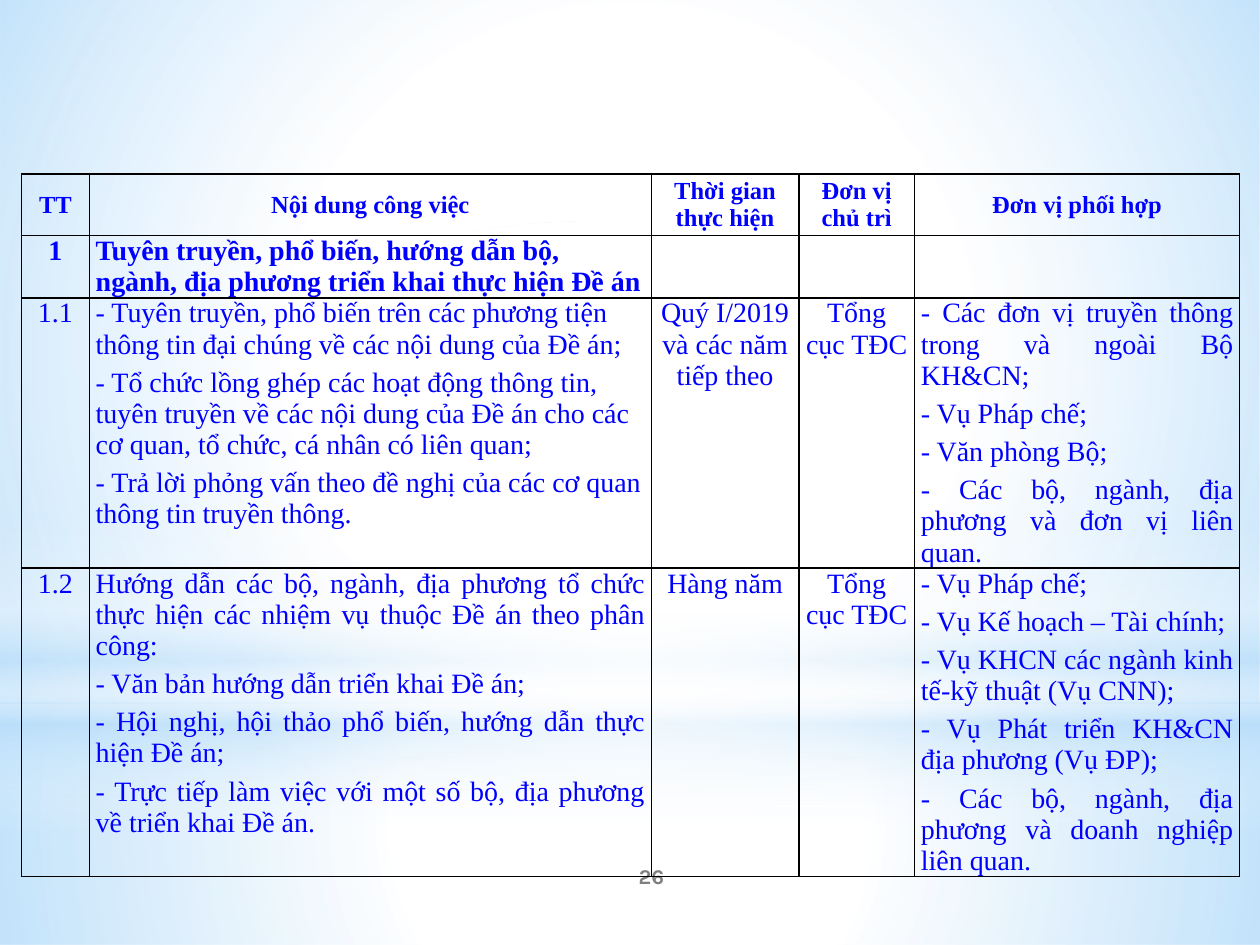
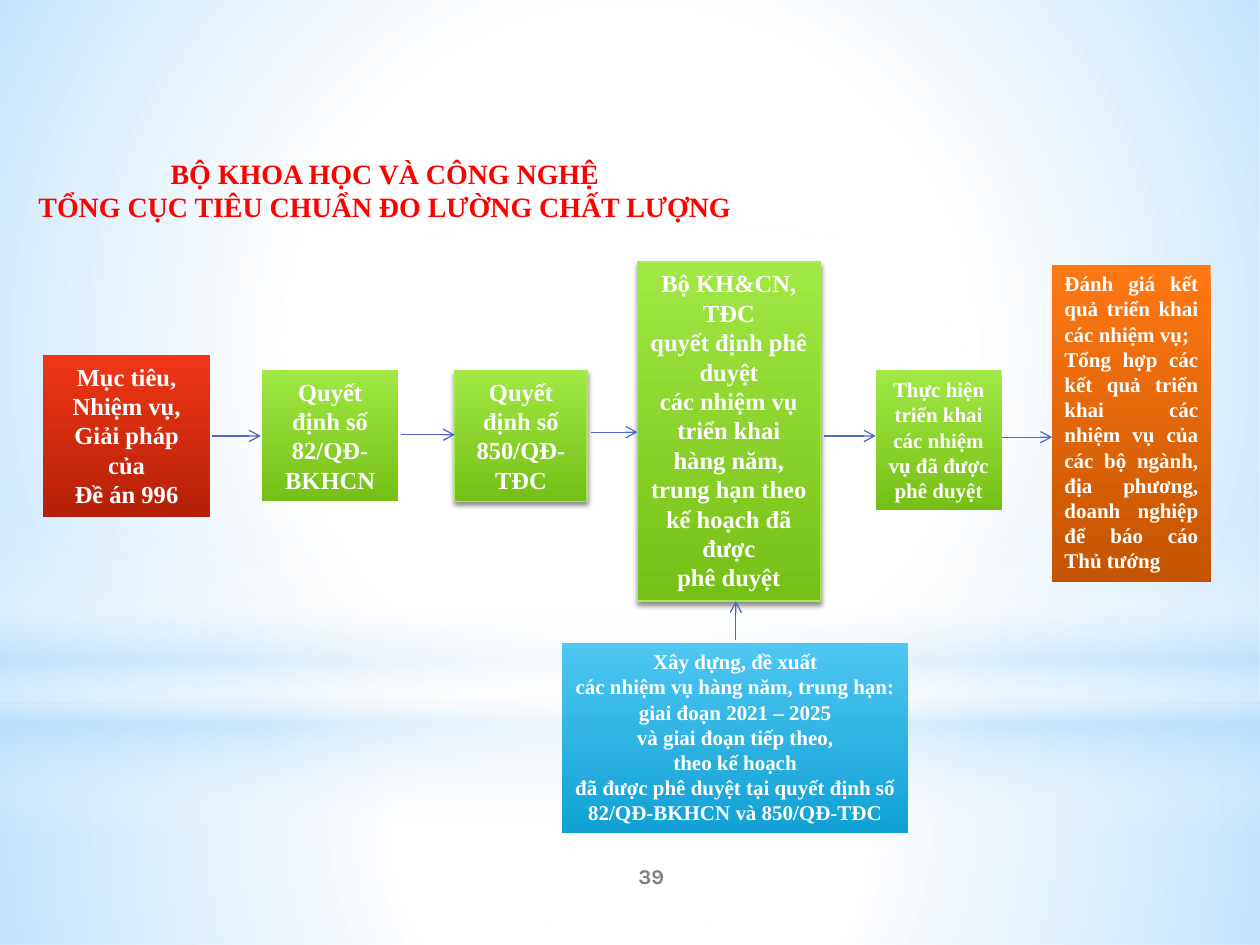
from dataclasses import dataclass

from pptx import Presentation
from pptx.dml.color import RGBColor
from pptx.enum.shapes import MSO_CONNECTOR, MSO_SHAPE
from pptx.enum.text import MSO_ANCHOR, PP_ALIGN
from pptx.oxml import parse_xml
from pptx.oxml.ns import nsdecls, qn
from pptx.util import Inches, Pt


@dataclass(frozen=True)
class Theme:
    text_font: str = "Times New Roman"
    number_font: str = "Karla"
    white: str = "FFFFFF"
    sky: str = "B4DCFA"
    black: str = "000000"
    table_text: str = "0000FF"
    heading: str = "FF0000"
    number: str = "7F7F7F"
    arrow: str = "4E67C8"
    step_edge: str = "A7EA52"
    red: tuple = ("F03617", "B52007")
    green: tuple = ("A0E844", "75C016")
    blue: tuple = ("4EC7F2", "11A1D4")
    orange: tuple = ("FF7813", "C45400")
    large: int = 16
    medium: int = 14
    small: int = 12
    hairline: float = 0.75
    table_leading: float = 1.11


THEME = Theme()
CENTER, LEFT, JUSTIFY = PP_ALIGN.CENTER, PP_ALIGN.LEFT, PP_ALIGN.JUSTIFY

COLUMN_WIDTHS = (0.54, 4.46, 1.17, 0.92, 2.58)
ROW_HEIGHTS = (0.49, 0.44, 1.91, 2.41)
PLAN_ROWS = (
    ("TT", "Nội dung công việc", "Thời gian thực hiện", "Đơn vị chủ trì", "Đơn vị phối hợp"),
    ("1", "Tuyên truyền, phổ biến, hướng dẫn bộ, ngành, địa phương triển khai thực hiện Đề án",
     "", "", ""),
    ("1.1",
     "- Tuyên truyền, phổ biến trên các phương tiện thông tin đại chúng về các nội dung "
     "của Đề án;\n"
     "- Tổ chức lồng ghép các hoạt động thông tin, tuyên truyền về các nội dung của Đề án "
     "cho các cơ quan, tổ chức, cá nhân có liên quan;\n"
     "- Trả lời phỏng vấn theo đề nghị của các cơ quan thông tin truyền thông.",
     "Quý I/2019 và các năm tiếp theo",
     "Tổng cục TĐC",
     "- Các đơn vị truyền thông trong và ngoài Bộ KH&CN;\n"
     "- Vụ Pháp chế;\n"
     "- Văn phòng Bộ;\n"
     "- Các bộ, ngành, địa phương và đơn vị liên quan."),
    ("1.2",
     "Hướng dẫn các bộ, ngành, địa phương tổ chức thực hiện các nhiệm vụ thuộc Đề án "
     "theo phân công:\n"
     "- Văn bản hướng dẫn triển khai Đề án;\n"
     "- Hội nghị, hội thảo phổ biến, hướng dẫn thực hiện Đề án;\n"
     "- Trực tiếp làm việc với một số bộ, địa phương về triển khai Đề án.",
     "Hàng năm",
     "Tổng cục TĐC",
     "- Vụ Pháp chế;\n"
     "- Vụ Kế hoạch – Tài chính;\n"
     "- Vụ KHCN các ngành kinh tế-kỹ thuật (Vụ CNN);\n"
     "- Vụ Phát triển KH&CN địa phương (Vụ ĐP);\n"
     "- Các bộ, ngành, địa phương và doanh nghiệp liên quan."),
)

# place, gradient, type size, alignment, raised, text
STEPS = (
    ((0.34, 2.82, 1.33, 1.28), THEME.red, THEME.medium, CENTER, False,
     "Mục tiêu,\nNhiệm vụ, Giải pháp của\nĐề án 996"),
    ((2.08, 2.94, 1.08, 1.04), THEME.green, THEME.medium, CENTER, False,
     "Quyết định số 82/QĐ-BKHCN"),
    ((3.61, 2.94, 1.05, 1.04), THEME.green, THEME.medium, CENTER, True,
     "Quyết định số 850/QĐ-TĐC"),
    ((5.06, 2.08, 1.45, 2.69), THEME.green, THEME.medium, CENTER, True,
     "Bộ KH&CN, TĐC\nquyết định phê duyệt\n"
     "các nhiệm vụ\vtriển khai\vhàng năm, trung hạn theo kế hoạch đã được\nphê duyệt"),
    ((6.95, 2.94, 1, 1.11), THEME.green, THEME.small, CENTER, False,
     "Thực hiện triển khai các nhiệm vụ đã được phê duyệt"),
    ((8.35, 2.1, 1.26, 2.52), THEME.orange, THEME.small, JUSTIFY, False,
     "Đánh giá kết quả triển khai các nhiệm vụ;\n"
     "Tổng hợp các kết quả triển khai các nhiệm vụ của các bộ ngành, địa phương, "
     "doanh nghiệp để báo cáo Thủ tướng"),
    ((4.46, 5.1, 2.75, 1.51), THEME.blue, THEME.small, CENTER, False,
     "Xây dựng, đề xuất\ncác nhiệm vụ hàng năm, trung hạn:\ngiai đoạn 2021 – 2025\n"
     "và giai đoạn tiếp theo,\ntheo kế hoạch\n"
     "đã được phê duyệt tại quyết định số 82/QĐ-BKHCN và 850/QĐ-TĐC"),
)

# from x, from y, to x, to y
ARROWS = (
    (1.68, 3.46, 2.07, 3.46),
    (3.18, 3.45, 3.61, 3.45),
    (4.69, 3.43, 5.06, 3.43),
    (6.54, 3.46, 6.95, 3.46),
    (7.95, 3.47, 8.35, 3.47),
    (5.84, 5.08, 5.84, 4.77),
)


def inches(lengths):
    return [Inches(length) for length in lengths]


def write(frame, text, size, color, align=CENTER, bold=True, font=THEME.text_font):
    """Fill a text frame, one paragraph per line of text."""
    frame.word_wrap = True
    frame.text = text
    for paragraph in frame.paragraphs:
        paragraph.alignment = align
        paragraph.font.name = font
        paragraph.font.size = Pt(size)
        paragraph.font.bold = bold
        paragraph.font.color.rgb = RGBColor.from_string(color)


def set_gradient(shape, stops, radial=False):
    """Stops are (position %, colour, opacity %)."""
    shape.fill.background()
    stop_xml = "".join(
        f'<a:gs pos="{position * 1000}"><a:srgbClr val="{color}">'
        f'<a:alpha val="{opacity * 1000}"/></a:srgbClr></a:gs>'
        for position, color, opacity in stops)
    direction = '<a:lin ang="5400000" scaled="0"/>'
    if radial:
        direction = ('<a:path path="circle"><a:fillToRect l="50000" t="50000" '
                     'r="50000" b="50000"/></a:path>')
    properties = shape.element.spPr
    properties.replace(properties.find(qn("a:noFill")), parse_xml(
        f'<a:gradFill {nsdecls("a")} rotWithShape="1"><a:gsLst>{stop_xml}</a:gsLst>'
        f'{direction}</a:gradFill>'))


def add_gradient_shape(slide, place, stops, radial=False, outline=MSO_SHAPE.RECTANGLE):
    shape = slide.shapes.add_shape(outline, *inches(place))
    shape.shadow.inherit = False
    shape.line.fill.background()
    set_gradient(shape, stops, radial)
    return shape


def add_backdrop(slide, layout):
    """Draw the sky glow and hand it to the layout, so that all slides share it."""
    white, sky = THEME.white, THEME.sky
    layers = (
        add_gradient_shape(slide, (0, 5.58, 10, 1.92),
                           ((0, white, 91), (37, white, 76), (100, sky, 79)), True),
        add_gradient_shape(slide, (0, 0, 10, 5.58),
                           ((0, white, 89), (48, white, 62), (100, sky, 79)), True),
        add_gradient_shape(slide, (0, 4.12, 10, 2.5),
                           ((0, white, 0), (29, white, 30), (45, sky, 40),
                            (55, white, 26), (65, sky, 60), (100, white, 0))),
        add_gradient_shape(slide, (0, 1.75, 10, 5.58),
                           ((0, white, 100), (56, white, 0)), True, MSO_SHAPE.OVAL),
    )
    for layer in layers:
        layout.shapes.element.append(layer.element)


def add_page_number(slide, number):
    box = slide.shapes.add_textbox(*inches((4.17, 6.75, 2, 0.4)))
    box.text_frame.vertical_anchor = MSO_ANCHOR.MIDDLE
    write(box.text_frame, str(number), THEME.small, THEME.number, font=THEME.number_font)


def set_borders(cell):
    properties = cell._tc.get_or_add_tcPr()
    for index, side in enumerate(("lnL", "lnR", "lnT", "lnB")):
        properties.insert(index, parse_xml(
            f'<a:{side} {nsdecls("a")} w="{Pt(1)}"><a:solidFill>'
            f'<a:srgbClr val="{THEME.black}"/></a:solidFill></a:{side}>'))


def cell_alignment(row, column):
    if row == 0 or column in (0, 2, 3):
        return CENTER
    return JUSTIFY if column == 4 or row == 3 else LEFT


def write_cell(cell, text, row, column):
    """Write with a fixed line pitch, which keeps the rows as tall as their text."""
    size = THEME.large if row else THEME.medium
    write(cell.text_frame, text, size, THEME.table_text,
          cell_alignment(row, column), bold=row < 2)
    paragraphs = cell.text_frame.paragraphs
    for paragraph in paragraphs:
        paragraph.line_spacing = Pt(round(size * THEME.table_leading, 1))
    for paragraph in paragraphs[:-1]:
        paragraph.space_after = Pt(4)


def add_plan_table(slide):
    table = slide.shapes.add_table(
        len(PLAN_ROWS), len(COLUMN_WIDTHS),
        *inches((0.17, 1.38, sum(COLUMN_WIDTHS), sum(ROW_HEIGHTS)))).table
    table.first_row = table.horz_banding = False
    for column, width in zip(table.columns, COLUMN_WIDTHS):
        column.width = Inches(width)
    for row, height in zip(table.rows, ROW_HEIGHTS):
        row.height = Inches(height)
    for row, entries in enumerate(PLAN_ROWS):
        for column, entry in enumerate(entries):
            cell = table.cell(row, column)
            cell.fill.background()
            set_borders(cell)
            cell.margin_left = cell.margin_right = Inches(0.05)
            cell.margin_top = cell.margin_bottom = 0
            cell.vertical_anchor = MSO_ANCHOR.MIDDLE if row == 0 else MSO_ANCHOR.TOP
            if entry:
                write_cell(cell, entry, row, column)


def add_heading(slide, text):
    box = slide.shapes.add_textbox(*inches((0.14, 1.19, 5.83, 0.64)))
    write(box.text_frame, text, THEME.large, THEME.heading)


def raise_step(step):
    """Give a step its light edge and soft shadow."""
    step.line.color.rgb = RGBColor.from_string(THEME.step_edge)
    step.line.width = Pt(THEME.hairline)
    step.element.spPr.find(qn("a:effectLst")).append(parse_xml(
        f'<a:outerShdw {nsdecls("a")} blurRad="{Pt(3.1)}" dist="{Pt(1.8)}" dir="5400000" '
        f'rotWithShape="0"><a:srgbClr val="{THEME.black}"><a:alpha val="45000"/>'
        f'</a:srgbClr></a:outerShdw>'))


def add_step(slide, place, colors, size, align, raised, text):
    top, bottom = colors
    step = add_gradient_shape(slide, place, ((0, top, 100), (100, bottom, 100)))
    if raised:
        raise_step(step)
    step.text_frame.vertical_anchor = MSO_ANCHOR.TOP
    write(step.text_frame, text, size, THEME.white, align)


def add_arrow(slide, ends):
    arrow = slide.shapes.add_connector(MSO_CONNECTOR.STRAIGHT, *inches(ends))
    arrow.line.color.rgb = RGBColor.from_string(THEME.arrow)
    arrow.line.width = Pt(THEME.hairline)
    properties = arrow.element.spPr
    properties.find(qn("a:ln")).append(
        parse_xml(f'<a:tailEnd {nsdecls("a")} type="arrow"/>'))
    properties.append(parse_xml(f'<a:effectLst {nsdecls("a")}/>'))


def main():
    deck = Presentation()
    deck.slide_width, deck.slide_height = Inches(10), Inches(7.5)
    blank = deck.slide_layouts[6]

    plan = deck.slides.add_slide(blank)
    add_backdrop(plan, blank)
    add_page_number(plan, 26)
    add_plan_table(plan)

    process = deck.slides.add_slide(blank)
    add_page_number(process, 39)
    add_heading(process, "BỘ KHOA HỌC VÀ CÔNG NGHỆ\nTỔNG CỤC TIÊU CHUẨN ĐO LƯỜNG CHẤT LƯỢNG")
    for step in STEPS:
        add_step(process, *step)
    for ends in ARROWS:
        add_arrow(process, ends)

    deck.save("out.pptx")


if __name__ == "__main__":
    main()
